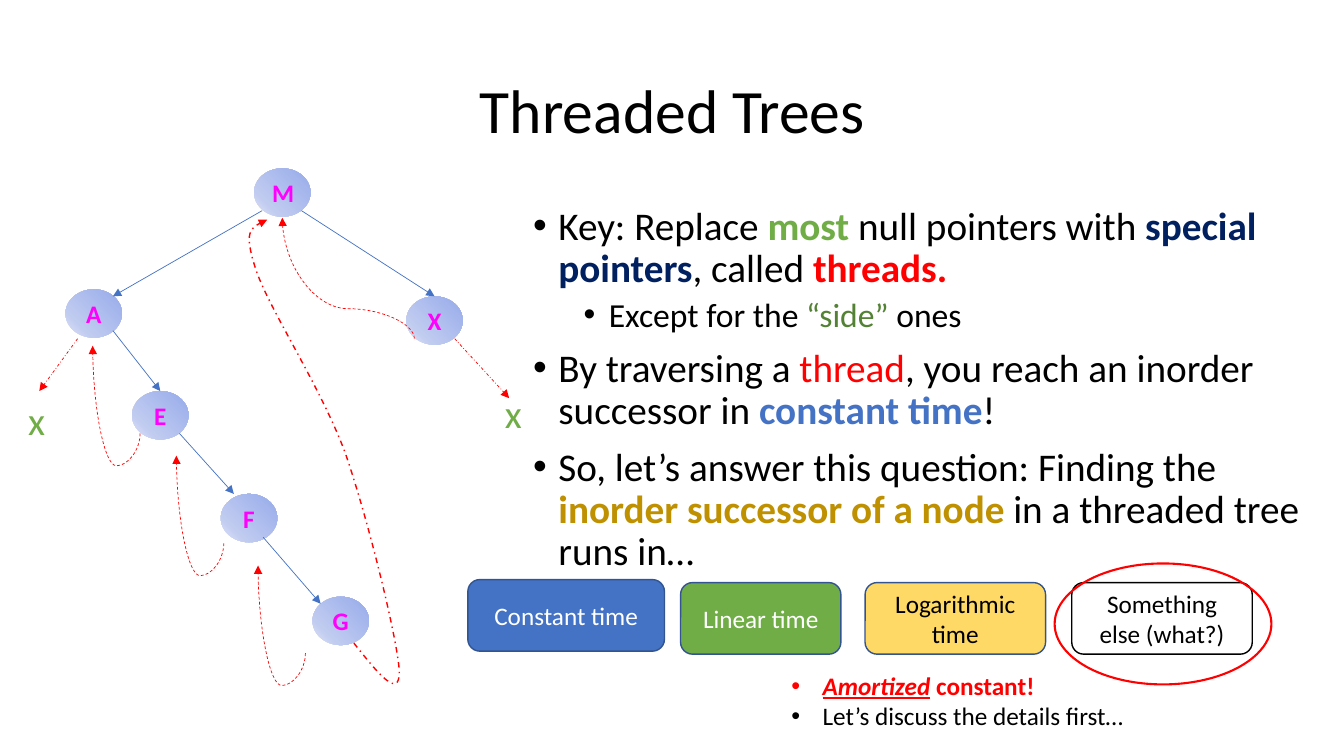
from dataclasses import dataclass

from lxml.etree import SubElement
from pptx import Presentation
from pptx.dml.color import RGBColor
from pptx.enum.dml import MSO_LINE
from pptx.enum.shapes import MSO_CONNECTOR, MSO_SHAPE
from pptx.enum.text import MSO_ANCHOR, PP_ALIGN
from pptx.oxml import parse_xml
from pptx.oxml.ns import nsdecls, qn
from pptx.util import Pt

PX = 9144  # 100 px to the inch


@dataclass(frozen=True)
class Theme:
    font: str = "Calibri"
    title: int = 44
    body: int = 28
    detail: int = 24
    label: int = 18
    black: str = "000000"
    white: str = "FFFFFF"
    red: str = "FF0000"
    green: str = "70AD47"
    dark_green: str = "548235"
    navy: str = "002060"
    blue: str = "4472C4"
    outline: str = "325491"
    gold: str = "BF9000"
    yellow: str = "FFD966"
    magenta: str = "FF00FF"
    node_stops: tuple = ((0, "96ABEA"), (74, "C0CBF0"), (100, "E0E5F7"))


THEME = Theme()
BOLD = {"bold": True}
CENTRED = {"alignment": PP_ALIGN.CENTER}
BULLET = {"line_spacing": 0.9, "space_before": Pt(10)}
SUB_BULLET = {"line_spacing": 0.9, "space_before": Pt(5)}

NODES = {"M": (252, 167), "A": (65, 287), "X": (403, 294),
         "E": (131, 388), "F": (219, 490), "G": (310, 592)}
EDGES = [((260, 209), (112, 294)), ((299, 209), (431, 294)),
         ((112, 328), (159, 388)), ((178, 430), (232, 490)),
         ((261, 533), (318, 599))]
THREADS = [((139, 430), (92, 343), -0.369), ((222, 539), (175, 452), -0.369),
           ((303, 648), (256, 561), -0.369), ((411, 336), (280, 216), 0.248)]
SIDE_THREADS = [((451, 336), (505, 395)), ((77, 336), (39, 388))]
SIDE_MARKS = [(18, 388), (491, 381)]
LONG_THREAD_BOX = (249, 218, 147, 461)
LONG_THREAD_START = (351, 638)
LONG_THREAD_CURVES = [((374, 667), (397, 696), (396, 665)),
                      ((394, 634), (366, 518), (343, 451)),
                      ((319, 385), (267, 307), (254, 268)),
                      ((241, 229), (253, 223), (265, 218))]
CHOICES = [
    ("Constant time", (464, 575, 195, 71), THEME.blue, THEME.outline, THEME.white),
    ("Linear time", (675, 578, 159, 71), THEME.green, THEME.outline, THEME.white),
    ("Logarithmic time", (858, 578, 179, 71), THEME.yellow, THEME.outline, THEME.black),
    ("Something else (what?)", (1063, 578, 179, 71), THEME.white, THEME.black, THEME.black),
]
KEY_POINTS = [
    (0, [("Key: Replace ",), ("most ", THEME.green, BOLD), ("null pointers with ",),
         ("special pointers", THEME.navy, BOLD), (", called ",),
         ("threads.", THEME.red, BOLD)]),
    (1, [("Except for the ",), ("“side” ", THEME.dark_green), ("ones",)]),
    (0, [("By traversing a ",), ("thread", THEME.red),
         (", you reach an inorder successor in ",),
         ("constant time", THEME.blue, BOLD), ("!",)]),
    (0, [("So, let’s answer this question: Finding the ",),
         ("inorder successor of a node ", THEME.gold, BOLD),
         ("in a threaded tree runs in…",)]),
]
ANSWERS = [
    [("Amortized", THEME.red, {"bold": True, "italic": True, "underline": True}),
     (" constant!", THEME.red, BOLD)],
    [("Let’s discuss the details first…",)],
]


def emu(*lengths):
    return [round(length * PX) for length in lengths]


def apply_format(target, values):
    for name, value in values.items():
        setattr(target, name, value)


def add_run(paragraph, size, text, color=THEME.black, style=None):
    run = paragraph.add_run()
    run.text = text
    apply_format(run.font, {"name": THEME.font, "size": Pt(size), **(style or {})})
    run.font.color.rgb = RGBColor.from_string(color)


def add_bullet(paragraph, left, hanging):
    properties = paragraph._p.get_or_add_pPr()
    properties.set("marL", str(left * PX))
    properties.set("indent", str(-hanging * PX))
    SubElement(properties, qn("a:buFont")).set("typeface", "Arial")
    SubElement(properties, qn("a:buChar")).set("char", "•")


def add_text_frame(slide, box, anchor=MSO_ANCHOR.TOP):
    frame = slide.shapes.add_textbox(*emu(*box)).text_frame
    apply_format(frame, {"word_wrap": True, "vertical_anchor": anchor})
    return frame


def next_paragraph(frame, index):
    return frame.add_paragraph() if index else frame.paragraphs[0]


def add_outline(shape, color, width, dash=None):
    shape.line.color.rgb = RGBColor.from_string(color)
    apply_format(shape.line, {"width": Pt(width), "dash_style": dash})


def add_arrowhead(shape):
    SubElement(shape.line._get_or_add_ln(), qn("a:tailEnd")).set("type", "triangle")


def add_plain_shape(slide, kind, box):
    shape = slide.shapes.add_shape(kind, *emu(*box))
    shape.shadow.inherit = False
    shape.fill.background()
    return shape


def add_label(shape, text, color, style=None):
    frame = shape.text_frame
    apply_format(frame, {"word_wrap": True, "vertical_anchor": MSO_ANCHOR.MIDDLE})
    apply_format(frame.paragraphs[0], CENTRED)
    add_run(frame.paragraphs[0], THEME.label, text, color, style)


def add_node(slide, name, position):
    node = add_plain_shape(slide, MSO_SHAPE.OVAL, (*position, 56, 48))
    node.line.fill.background()
    stops = "".join(f'<a:gs pos="{place * 1000}"><a:srgbClr val="{color}"/></a:gs>'
                    for place, color in THEME.node_stops)
    gradient = parse_xml(
        f'<a:gradFill {nsdecls("a")} rotWithShape="1"><a:gsLst>{stops}</a:gsLst>'
        '<a:path path="circle"><a:fillToRect l="100000" b="100000"/></a:path></a:gradFill>')
    properties = node._element.spPr
    properties.replace(properties.find(qn("a:noFill")), gradient)
    add_label(node, name, THEME.magenta, BOLD)


def add_arrow(slide, start, end, color, dash=None, kind=MSO_CONNECTOR.STRAIGHT):
    arrow = slide.shapes.add_connector(kind, *emu(*start, *end))
    add_outline(arrow, color, 0.5, dash)
    add_arrowhead(arrow)
    SubElement(arrow._element.spPr, qn("a:effectLst"))
    return arrow


def add_thread(slide, start, end, bend):
    """Curve that leaves and arrives vertically: a connector turned by 90 degrees."""
    (x1, y1), (x2, y2) = start, end
    middle_x, middle_y = (x1 + x2) / 2, (y1 + y2) / 2
    half_run, half_rise = (y1 - y2) / 2, (x1 - x2) / 2
    thread = add_arrow(slide, (middle_x + half_run, middle_y - half_rise),
                       (middle_x - half_run, middle_y + half_rise),
                       THEME.red, MSO_LINE.DASH, MSO_CONNECTOR.CURVE)
    properties = thread._element.spPr
    properties.find(qn("a:xfrm")).set("rot", "5400000")
    geometry = properties.find(qn("a:prstGeom"))
    guides = geometry.find(qn("a:avLst"))
    if guides is None:
        guides = SubElement(geometry, qn("a:avLst"))
    guide = SubElement(guides, qn("a:gd"))
    guide.set("name", "adj1")
    guide.set("fmla", f"val {round(bend * 100000)}")


def add_long_thread(slide):
    """Bezier curve from G back up to M, in px inside its own box."""
    left, top, width, height = LONG_THREAD_BOX
    builder = slide.shapes.build_freeform(left, top, scale=PX)
    builder.add_line_segments([(left + width, top + height)], close=False)
    thread = builder.convert_to_shape()
    thread.shadow.inherit = False
    thread.fill.background()
    outline = next(thread._element.iter(qn("a:path")))
    for step in list(outline):
        outline.remove(step)
    for tag, points in [("a:moveTo", [LONG_THREAD_START]),
                        *(("a:cubicBezTo", curve) for curve in LONG_THREAD_CURVES)]:
        step = SubElement(outline, qn(tag))
        for x, y in points:
            point = SubElement(step, qn("a:pt"))
            point.set("x", str(x - left))
            point.set("y", str(y - top))
    add_outline(thread, THEME.red, 1, MSO_LINE.DASH_DOT)
    add_arrowhead(thread)


def add_choice(slide, text, box, fill, outline, color):
    choice = add_plain_shape(slide, MSO_SHAPE.ROUNDED_RECTANGLE, box)
    choice.fill.solid()
    choice.fill.fore_color.rgb = RGBColor.from_string(fill)
    add_outline(choice, outline, 1)
    add_label(choice, text, color)


def add_title(slide):
    heading = add_text_frame(slide, (92, 40, 1150, 145), MSO_ANCHOR.MIDDLE).paragraphs[0]
    apply_format(heading, {**CENTRED, "line_spacing": 0.9})
    add_run(heading, THEME.title, "Threaded Trees")


def add_key_points(slide):
    frame = add_text_frame(slide, (519, 200, 784, 476))
    for index, (level, runs) in enumerate(KEY_POINTS):
        point = next_paragraph(frame, index)
        apply_format(point, {"level": level, **(SUB_BULLET if level else BULLET)})
        add_bullet(point, 25 + 50 * level, 25)
        for run in runs:
            add_run(point, THEME.detail if level else THEME.body, *run)


def add_answers(slide):
    frame = add_text_frame(slide, (775, 660, 417, 71))
    for index, runs in enumerate(ANSWERS):
        answer = next_paragraph(frame, index)
        add_bullet(answer, 31, 31)
        for run in runs:
            add_run(answer, THEME.label, *run)


def main():
    deck = Presentation()
    deck.slide_width, deck.slide_height = emu(1333, 750)
    slide = deck.slides.add_slide(deck.slide_layouts[6])
    add_title(slide)
    add_key_points(slide)
    for name, position in NODES.items():
        add_node(slide, name, position)
    for start, end in EDGES:
        add_arrow(slide, start, end, THEME.blue)
    for thread in THREADS:
        add_thread(slide, *thread)
    for position in SIDE_MARKS:
        mark = add_text_frame(slide, (*position, 43, 57)).paragraphs[0]
        add_run(mark, THEME.body, "x", THEME.green)
    add_long_thread(slide)
    for choice in CHOICES:
        add_choice(slide, *choice)
    add_outline(add_plain_shape(slide, MSO_SHAPE.OVAL, (1046, 559, 215, 120)), THEME.red, 1.5)
    add_answers(slide)
    for start, end in SIDE_THREADS:
        add_arrow(slide, start, end, THEME.red, MSO_LINE.DASH_DOT)
    deck.save("out.pptx")


if __name__ == "__main__":
    main()
